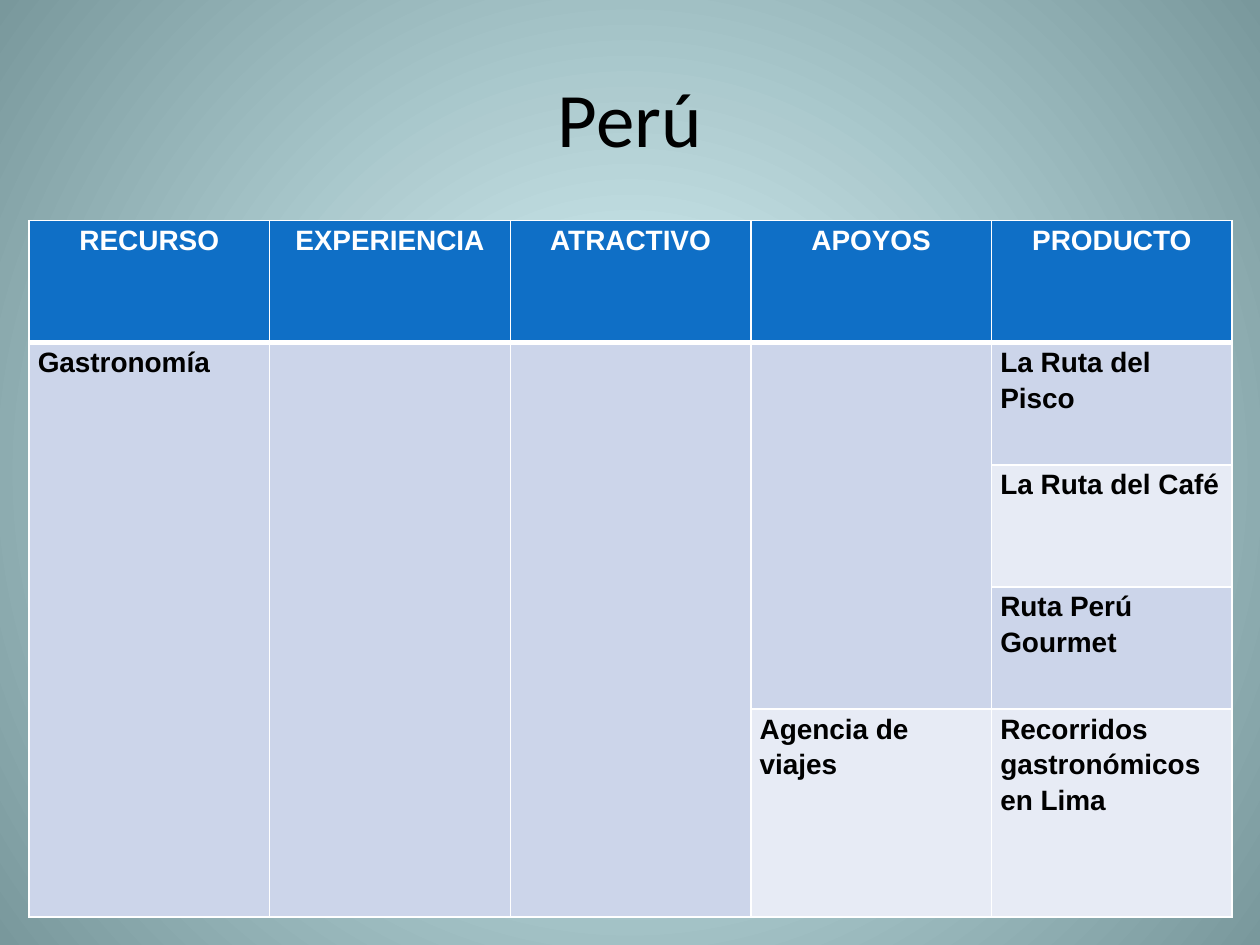
from lxml import etree
from pptx import Presentation
from pptx.dml.color import RGBColor
from pptx.enum.text import MSO_ANCHOR, PP_ALIGN
from pptx.oxml.ns import qn
from pptx.util import Inches, Pt

CENTER, LEFT = PP_ALIGN.CENTER, PP_ALIGN.LEFT
MIDDLE = MSO_ANCHOR.MIDDLE

BLACK = RGBColor(0x00, 0x00, 0x00)
WHITE = RGBColor(0xFF, 0xFF, 0xFF)
HEADER_BLUE = RGBColor(0x0F, 0x6F, 0xC6)
BAND_DARK = RGBColor(0xCC, 0xD5, 0xEA)
BAND_LIGHT = RGBColor(0xE7, 0xEB, 0xF5)
GLOW_CENTER = RGBColor(0xDE, 0xFB, 0xFF)
GLOW_EDGE = RGBColor(0x79, 0x98, 0x9C)

WIDTH, HEIGHT = Inches(10), Inches(7.5)
TABLE_LEFT, TABLE_TOP = Inches(0.23), Inches(1.75)
COLUMN_WIDTH = Inches(1.91)
ROW_HEIGHTS = [Inches(0.97)] * 4 + [Inches(1.65)]

HEADERS = ["RECURSO", "EXPERIENCIA", "ATRACTIVO", "APOYOS", "PRODUCTO"]
PRODUCTS = ["La Ruta del Pisco", "La Ruta del Café", "Ruta Perú Gourmet",
            "Recorridos gastronómicos en Lima"]
# Last row joined to row 1, for each column that has a tall cell
TALL_CELLS = {0: 4, 1: 4, 2: 4, 3: 3}


def write_text(frame, text, size=16, font="Arial", color=BLACK, bold=True,
               align=LEFT, spacing=1.15):
    paragraph = frame.paragraphs[0]
    paragraph.alignment = align
    paragraph.line_spacing = spacing
    run = paragraph.add_run()
    run.text = text
    run.font.size = Pt(size)
    run.font.name = font
    run.font.bold = bold
    run.font.color.rgb = color


def paint_background(slide):
    fill = slide.background.fill
    fill.gradient()
    for stop, color in zip(fill.gradient_stops, (GLOW_CENTER, GLOW_EDGE)):
        stop.color.rgb = color
    # Turn the linear gradient into a circular one around the centre
    linear = next(slide.element.iter(qn("a:lin")))
    circle = etree.Element(qn("a:path"), path="circle")
    etree.SubElement(circle, qn("a:fillToRect"),
                     {side: "50000" for side in "ltrb"})
    linear.getparent().replace(linear, circle)


def add_title(slide, text):
    box = slide.shapes.add_textbox(int(WIDTH * 0.05), int(HEIGHT * 0.04),
                                   int(WIDTH * 0.9), Inches(1.25))
    frame = box.text_frame
    frame.word_wrap = True
    frame.vertical_anchor = MIDDLE
    write_text(frame, text, size=44, font="Calibri", bold=False,
               align=CENTER, spacing=1.0)


def set_borders(cell, top=1, bottom=1):
    properties = cell._tc.get_or_add_tcPr()
    widths = {"lnL": 1, "lnR": 1, "lnT": top, "lnB": bottom}
    for index, (side, width) in enumerate(widths.items()):
        line = etree.Element(qn(f"a:{side}"), w=str(Pt(width)))
        solid = etree.SubElement(line, qn("a:solidFill"))
        etree.SubElement(solid, qn("a:srgbClr"), val=str(WHITE))
        properties.insert(index, line)


def style_cell(cell, row):
    cell.margin_left = cell.margin_right = Inches(0.07)
    cell.margin_top = cell.margin_bottom = 0
    cell.fill.solid()
    band = BAND_DARK if row % 2 else BAND_LIGHT
    cell.fill.fore_color.rgb = band if row else HEADER_BLUE
    set_borders(cell, top=3 if row == 1 else 1, bottom=1 if row else 3)


def add_tourism_table(slide):
    rows, columns = len(ROW_HEIGHTS), len(HEADERS)
    table = slide.shapes.add_table(rows, columns, TABLE_LEFT, TABLE_TOP,
                                   COLUMN_WIDTH * columns,
                                   sum(ROW_HEIGHTS)).table
    for column in table.columns:
        column.width = COLUMN_WIDTH
    for row, height in enumerate(ROW_HEIGHTS):
        table.rows[row].height = height
        for column in range(columns):
            style_cell(table.cell(row, column), row)

    # Tall cells
    for column, last_row in TALL_CELLS.items():
        table.cell(1, column).merge(table.cell(last_row, column))

    # Wording
    for column, header in enumerate(HEADERS):
        write_text(table.cell(0, column).text_frame, header,
                   color=WHITE, align=CENTER)
    write_text(table.cell(1, 0).text_frame, "Gastronomía")
    write_text(table.cell(4, 3).text_frame, "Agencia de viajes")
    for row, product in enumerate(PRODUCTS, start=1):
        write_text(table.cell(row, 4).text_frame, product)


def main():
    deck = Presentation()
    deck.slide_width, deck.slide_height = WIDTH, HEIGHT
    slide = deck.slides.add_slide(deck.slide_layouts[6])
    paint_background(slide)
    add_title(slide, "Perú")
    add_tourism_table(slide)
    deck.save("out.pptx")


if __name__ == "__main__":
    main()
